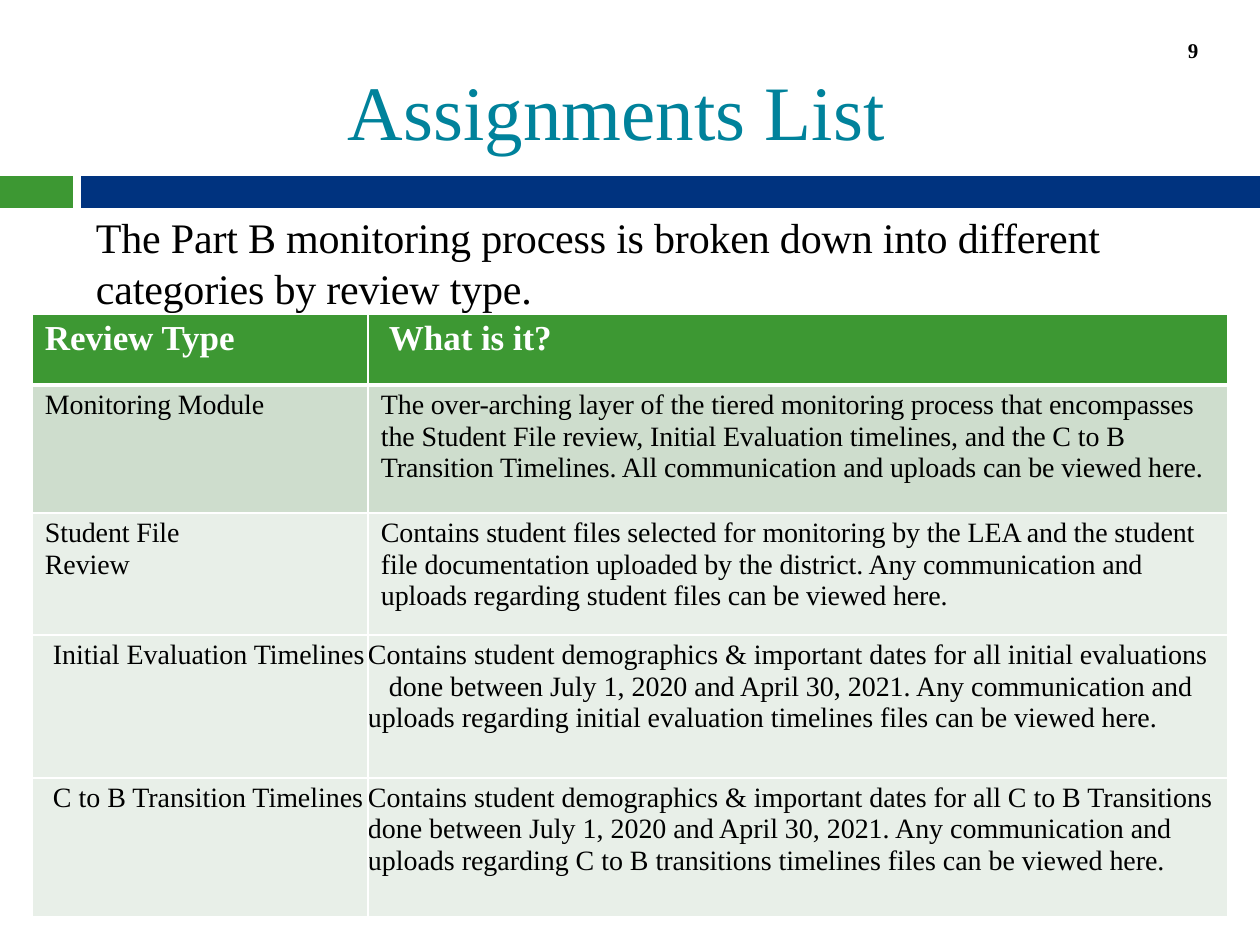
from pptx import Presentation
from pptx.dml.color import RGBColor
from pptx.enum.shapes import MSO_SHAPE
from pptx.enum.text import MSO_ANCHOR
from pptx.oxml.ns import qn
from pptx.util import Pt
from lxml.etree import SubElement

PX = 914400 // 126
GREEN = RGBColor(0x3D, 0x98, 0x33)
NAVY = RGBColor(0x00, 0x33, 0x7F)
TEAL = RGBColor(0x00, 0x82, 0x9B)
BLACK = RGBColor(0, 0, 0)
WHITE = RGBColor(0xFF, 0xFF, 0xFF)
BAND_DARK = RGBColor(0xCE, 0xDD, 0xCD)
BAND_LIGHT = RGBColor(0xE8, 0xEF, 0xE8)
FONT = "Times New Roman"

COLUMNS = [336, 860]
# Each row: height, fill, then the text and left indent of each cell.
ROWS = [
    (71, GREEN, ("Review Type", 13), ("What is it?", 21)),
    (128, BAND_DARK, ("Monitoring Module", 13),
     ("The over-arching layer of the tiered monitoring process that encompasses "
      "the Student File review, Initial Evaluation timelines, and the C to B "
      "Transition Timelines. All communication and uploads can be viewed here.", 13)),
    (122, BAND_LIGHT, ("Student File\vReview", 13),
     ("Contains student files selected for monitoring by the LEA and the student "
      "file documentation uploaded by the district. Any communication and "
      "uploads regarding student files can be viewed here.", 13)),
    (143, BAND_LIGHT, ("Initial Evaluation Timelines", 21),
     ("Contains student demographics & important dates for all initial evaluations\n"
      "done between July 1, 2020 and April 30, 2021. Any communication and "
      "uploads regarding initial evaluation timelines files can be viewed here.", 0)),
    (139, BAND_LIGHT, ("C to B Transition Timelines", 21),
     ("Contains student demographics & important dates for all C to B Transitions "
      "done between July 1, 2020 and April 30, 2021. Any communication and "
      "uploads regarding C to B transitions timelines files can be viewed here.", 0)),
]


def write_text(frame, text, *, size, color=BLACK, bold=False, tracking=0,
               indent=0, next_indent=0):
    """Fill a frame; next_indent is the first-line indent of later paragraphs."""
    frame.word_wrap = True
    frame.text = text
    for number, para in enumerate(frame.paragraphs):
        properties = para._p.get_or_add_pPr()
        properties.set("marL", str(indent * PX))
        properties.set("indent", str(next_indent * PX if number else 0))
        for span in para.runs:
            span.font.name = FONT
            span.font.size = Pt(size)
            span.font.bold = bold
            span.font.color.rgb = color
            span._r.get_or_add_rPr().set("spc", str(tracking))


def add_text(slide, left, top, width, height, text, anchor=MSO_ANCHOR.TOP, **style):
    box = slide.shapes.add_textbox(left * PX, top * PX, width * PX, height * PX)
    frame = box.text_frame
    frame.margin_left = frame.margin_right = frame.margin_bottom = 0
    frame.margin_top = PX
    frame.vertical_anchor = anchor
    write_text(frame, text, **style)


def add_bar(slide, left, top, width, height, color):
    bar = slide.shapes.add_shape(
        MSO_SHAPE.RECTANGLE, left * PX, top * PX, width * PX, height * PX)
    bar.shadow.inherit = False
    bar.fill.solid()
    bar.fill.fore_color.rgb = color
    bar.line.fill.background()


def add_divider(slide, left, top, width, height):
    accent, gap = 73, 8
    add_bar(slide, left, top, accent, height, GREEN)
    add_bar(slide, left + accent + gap, top, width - accent - gap, height, NAVY)


def set_borders(cell, **widths):
    """Draw white borders, with widths in points keyed by side."""
    properties = cell._tc.get_or_add_tcPr()
    for side in ("lnL", "lnR", "lnT", "lnB"):
        line = SubElement(properties, qn("a:" + side), w=str(Pt(widths.get(side, 1))))
        fill = SubElement(line, qn("a:solidFill"))
        SubElement(fill, qn("a:srgbClr"), val=str(WHITE))


def add_review_table(slide, left, top):
    heights = [row[0] for row in ROWS]
    table = slide.shapes.add_table(
        len(ROWS), len(COLUMNS), left * PX, top * PX,
        sum(COLUMNS) * PX, sum(heights) * PX).table
    table.horz_banding = False
    for column, width in zip(table.columns, COLUMNS):
        column.width = width * PX
    for index, (height, fill, *contents) in enumerate(ROWS):
        table.rows[index].height = height * PX
        header = index == 0
        for cell, (text, indent) in zip(table.rows[index].cells, contents):
            cell.margin_left = cell.margin_right = cell.margin_bottom = 0
            cell.margin_top = 5 * PX
            set_borders(cell, lnT=3 if index == 1 else 1, lnB=3 if header else 1)
            cell.fill.solid()
            cell.fill.fore_color.rgb = fill
            write_text(cell.text_frame, text, size=20 if header else 16,
                       color=WHITE if header else BLACK, bold=header,
                       tracking=-5 if index < 3 else 0, indent=indent,
                       next_indent=21)


def main():
    deck = Presentation()
    deck.slide_width, deck.slide_height = 1260 * PX, 945 * PX
    page = deck.slides.add_slide(deck.slide_layouts[6])
    add_divider(page, 0, 176, 1260, 32)
    add_text(page, 348, 60, 562, 96, "Assignments List", MSO_ANCHOR.BOTTOM,
             size=44, color=TEAL)
    add_text(page, 96, 211, 1050, 103,
             "The Part B monitoring process is broken down into different "
             "categories by review type.", size=24, tracking=-10)
    add_text(page, 1188, 37, 15, 54, "9", size=12, bold=True)
    add_review_table(page, 32, 314)
    deck.save("out.pptx")


if __name__ == "__main__":
    main()
